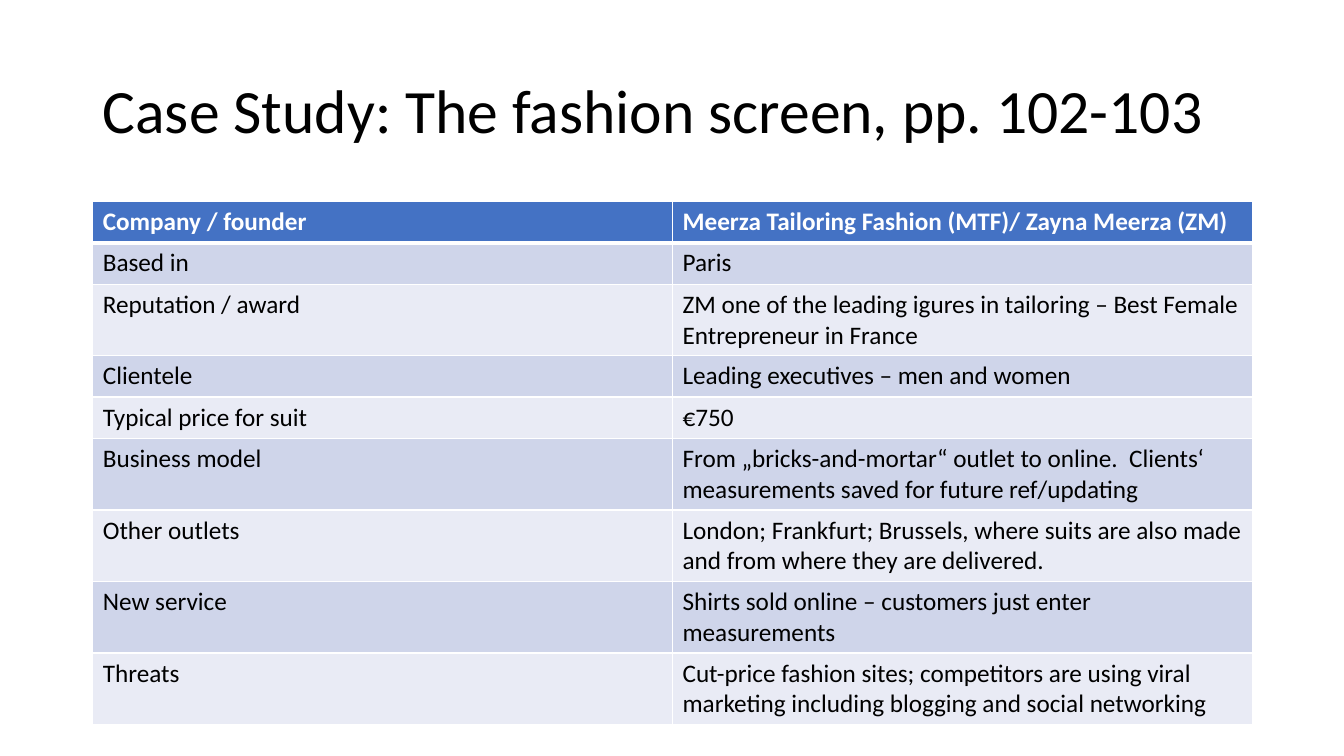
import pptx
import pptx.util
import pptx.dml.color
import pptx.enum.text
import pptx.oxml
import pptx.oxml.ns
from dataclasses import dataclass

Inches = pptx.util.Inches


@dataclass(frozen=True)
class Theme:
    font: str = "Calibri"
    title_size: int = 44
    cell_size: int = 18
    ink: str = "000000"
    paper: str = "FFFFFF"
    head: str = "4472C4"
    bands: tuple = ("CFD5EA", "E9EBF5")
    thin: int = 1
    thick: int = 3


THEME = Theme()
LINE = 0.41  # height of a row with one line
PAIR = 0.71  # height of a row with two lines

TITLE = "Case Study: The fashion screen, pp. 102-103"
FACTS = [
    ("Company / founder", "Meerza Tailoring Fashion (MTF)/ Zayna Meerza (ZM)", LINE),
    ("Based in", "Paris", LINE),
    ("Reputation / award",
     "ZM one of the leading igures in tailoring – Best Female Entrepreneur in France", PAIR),
    ("Clientele", "Leading executives – men and women", LINE),
    ("Typical price for suit", "€750", LINE),
    ("Business model",
     "From „bricks-and-mortar“ outlet to online.  Clients‘ measurements saved for future ref/updating",
     PAIR),
    ("Other outlets",
     "London; Frankfurt; Brussels, where suits are also made and from where they are delivered.",
     PAIR),
    ("New service", "Shirts sold online – customers just enter measurements", PAIR),
    ("Threats",
     "Cut-price fashion sites; competitors are using viral marketing including blogging"
     " and social networking", PAIR),
]


def color(code):
    return pptx.dml.color.RGBColor.from_string(code)


def write(frame, text, size, ink, bold=False):
    frame.text = text
    for run in frame.paragraphs[0].runs:
        run.font.name = THEME.font
        run.font.size = pptx.util.Pt(size)
        run.font.bold = bold
        run.font.color.rgb = color(ink)


def edge(cell, widths):
    # Cell borders, in the order left, right, top, bottom
    props = cell._tc.get_or_add_tcPr()
    for side, width in zip("LRTB", widths):
        props.append(pptx.oxml.parse_xml(
            f'<a:ln{side} {pptx.oxml.ns.nsdecls("a")} w="{pptx.util.Pt(width)}">'
            f'<a:solidFill><a:srgbClr val="{THEME.paper}"/></a:solidFill></a:ln{side}>'))


def add_title(slide, left, top, width, height):
    frame = slide.shapes.add_textbox(
        Inches(left), Inches(top), Inches(width), Inches(height)).text_frame
    frame.word_wrap = True
    frame.vertical_anchor = pptx.enum.text.MSO_ANCHOR.MIDDLE
    write(frame, TITLE, THEME.title_size, THEME.ink)
    frame.paragraphs[0].line_spacing = 0.9


def add_facts(slide, left, top, width):
    total = sum(height for *_, height in FACTS)
    table = slide.shapes.add_table(
        len(FACTS), 2, Inches(left), Inches(top), Inches(width), Inches(total)).table
    for column in table.columns:
        column.width = Inches(width / 2)

    for index, (label, value, height) in enumerate(FACTS):
        table.rows[index].height = Inches(height)
        head = index == 0
        fill = THEME.head if head else THEME.bands[(index - 1) % 2]
        ink = THEME.paper if head else THEME.ink
        above = THEME.thick if index == 1 else THEME.thin
        below = THEME.thick if head else THEME.thin
        for cell, text in zip(table.rows[index].cells, (label, value)):
            edge(cell, (THEME.thin, THEME.thin, above, below))
            cell.fill.solid()
            cell.fill.fore_color.rgb = color(fill)
            write(cell.text_frame, text, THEME.cell_size, ink, head)


def main():
    deck = pptx.Presentation()
    deck.slide_width = Inches(13.33)
    deck.slide_height = Inches(7.5)
    slide = deck.slides.add_slide(deck.slide_layouts[6])
    slide.background.fill.solid()
    slide.background.fill.fore_color.rgb = color(THEME.paper)

    # Title above, table of facts below, on the same margins
    left, width = 0.92, 11.5
    add_title(slide, left, 0.4, width, 1.45)
    add_facts(slide, left, 2, width)
    deck.save("out.pptx")


if __name__ == "__main__":
    main()
